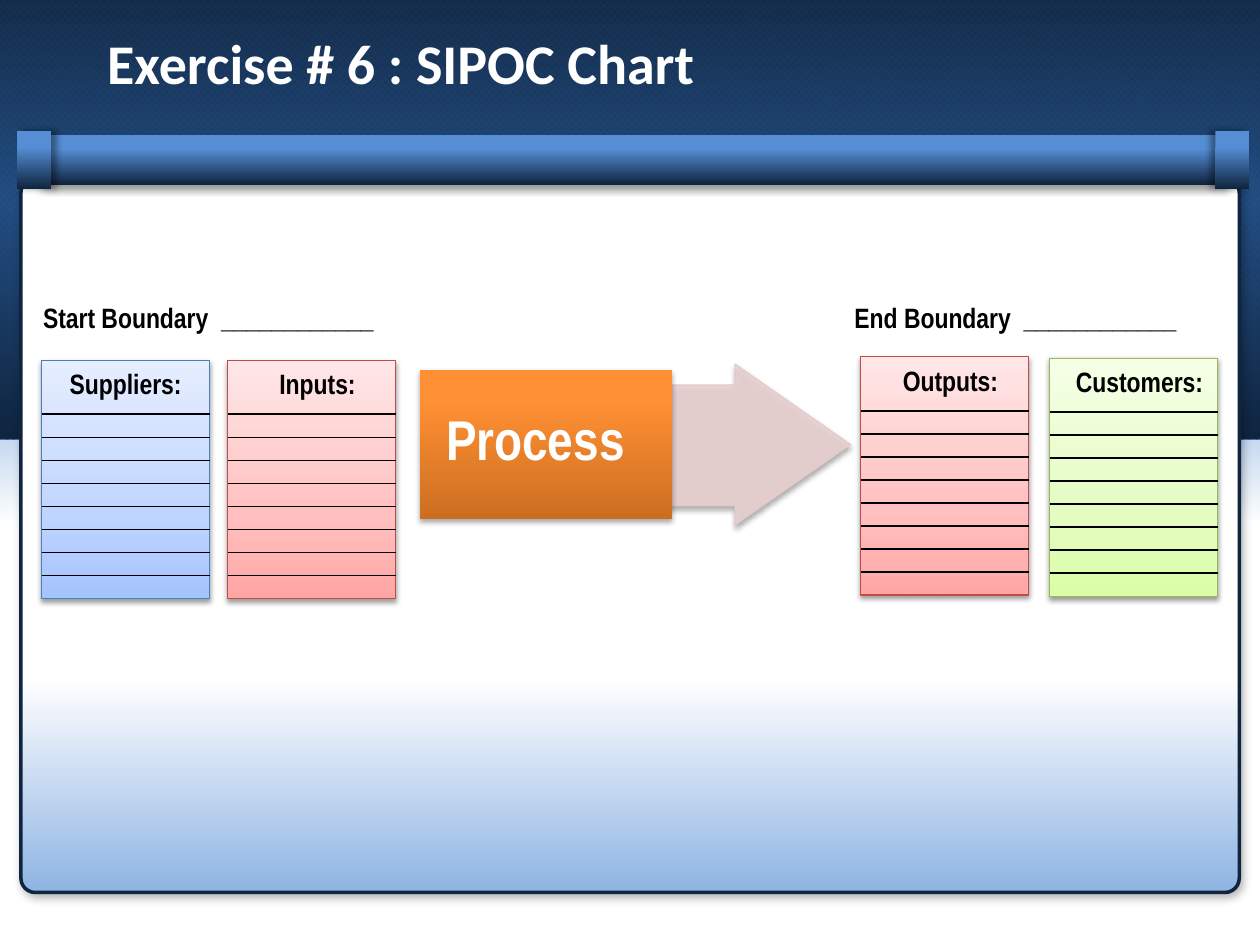
from lxml.etree import SubElement
from pptx import Presentation
from pptx.dml.color import RGBColor
from pptx.enum.dml import MSO_PATTERN
from pptx.enum.shapes import MSO_CONNECTOR, MSO_SHAPE
from pptx.enum.text import MSO_ANCHOR as Anchor, MSO_AUTO_SIZE as AutoSize, PP_ALIGN as Align
from pptx.oxml.ns import qn
from pptx.util import Pt

THEME = {
    "title_font": "Calibri", "font": "Arial Narrow",
    "large": 32, "small": 16,
    "white": "FFFFFF", "black": "000000", "navy": "0F243E", "blue": "558ED5",
    "arrow": "E8D0D0", "arrow_line": "E3CBCB",
    # Gradients: angle, then stops of position, colour and optional opacity
    "floor": (90, [(0, "8EB4E3"), (29, "FFFFFF"), (100, "FFFFFF")]),
    "sky": (90, [(0, "0F243E", 90), (46, "1F497D", 90), (100, "0F243E")]),
    "paper": (90, [(70, "FFFFFF"), (100, "8EB4E3")]),
    "tube": (90, [(28, "558ED5"), (100, "0F243E")]),
    "process": (270, [(0, "CC6E20"), (80, "FF9034"), (100, "FF9136")]),
    "blue_panel": (270, [(0, "A4C4FF"), (35, "BFD4FF"), (100, "E6EEFF")]),
    "red_panel": (270, [(0, "FFA6A5"), (35, "FFC0BF"), (100, "FFE7E7")]),
    "green_panel": (270, [(0, "DAFDA7"), (35, "E4FCC2"), (100, "F5FFE7")]),
    "blue_line": "4B7EBC", "red_line": "BF4C48", "green_line": "98B955",
    # Shadows: opacity, blur, distance, direction
    "paper_shadow": (30, 4.5, 2.6, 53),
    "panel_shadow": (38, 3.1, 1.6, 90),
    "process_shadow": (35, 3.1, 1.8, 90),
}

TITLE = ("Exercise # 6 : SIPOC Chart", (54, 12.2, 624, 46.1))
BOUNDARIES = [
    ("Start Boundary  ____________", (16.6, 167.8, 205.2, 26.6)),
    ("End Boundary  ____________", (480.2, 167.8, 200.2, 26.6)),
]
PROCESS = ("Process", (247, 227.5, 118, 46.1))
PROCESS_BOX = (240, 211.5, 144, 85)
ARROW = [(252, 220), (420.5, 220), (420.5, 208.5), (486, 254.5),
         (420.5, 300.5), (420.5, 289), (252, 289)]
# Name, left, top, header indent, colour family
PANELS = [
    ("Suppliers:", 23.8, 205.9, 0, "blue"),
    ("Inputs:", 130.2, 205.9, 6.5, "red"),
    ("Outputs:", 491.9, 203.9, 6.5, "red"),
    ("Customers:", 599.9, 204.7, 6.5, "green"),
]
PANEL_WIDTH, PANEL_HEIGHT = 96, 136.1
HEADER_HEIGHT, HEADER_TEXT_HEIGHT, ROWS = 30.9, 26.6, 8

SKY_BOX = (-2, -0.7, 723, 252)
# Box and shadow direction
TUBE_PARTS = [
    ((23, 77.2, 678.2, 28.4), 90),
    ((9.8, 74.9, 19.4, 33.1), 0),
    ((694.5, 74.9, 19.4, 33.1), 180),
]


def rgb(name):
    return RGBColor.from_string(THEME.get(name, name))


def assign(target, values):
    for name, value in values.items():
        setattr(target, name, value)


def place(shape, box):
    assign(shape, dict(zip(("left", "top", "width", "height"), map(Pt, box))))


def add_color(parent, color, opacity=100):
    element = SubElement(parent, qn("a:srgbClr"), val=color)
    if opacity < 100:
        SubElement(element, qn("a:alpha"), val=str(opacity * 1000))


def set_gradient(shape, name):
    angle, stops = THEME[name]
    shape.fill.solid()
    properties = shape.element.spPr
    solid = properties.find(qn("a:solidFill"))
    gradient = SubElement(properties, qn("a:gradFill"), rotWithShape="1")
    properties.replace(solid, gradient)
    stop_list = SubElement(gradient, qn("a:gsLst"))
    for position, *color in stops:
        add_color(SubElement(stop_list, qn("a:gs"), pos=str(position * 1000)), *color)
    SubElement(gradient, qn("a:lin"), ang=str(angle * 60000), scaled="0")


def set_line(shape, color, width):
    shape.line.color.rgb = rgb(color)
    shape.line.width = Pt(width)


def set_shadow(shape, shadow):
    opacity, blur, distance, direction = shadow
    effects = shape.element.spPr.find(qn("a:effectLst"))
    outer = SubElement(effects, qn("a:outerShdw"), blurRad=str(Pt(blur)),
                       dist=str(Pt(distance)), dir=str(direction * 60000), rotWithShape="0")
    add_color(outer, THEME["black"], opacity)


def add_box(shapes, box, gradient=None, line=None, shadow=None, kind=MSO_SHAPE.RECTANGLE):
    shape = shapes.add_shape(kind, *map(Pt, box))
    shape.shadow.inherit = False
    if gradient:
        set_gradient(shape, gradient)
    if line:
        set_line(shape, *line)
    else:
        shape.line.fill.background()
    if shadow:
        set_shadow(shape, shadow)
    return shape


def write(shape, text, color, size="small", font="font", align=Align.CENTER,
          anchor=Anchor.MIDDLE, wrap=False):
    frame = shape.text_frame
    frame.text = text
    assign(frame, {"word_wrap": wrap, "vertical_anchor": anchor,
                   "auto_size": AutoSize.SHAPE_TO_FIT_TEXT})
    paragraph = frame.paragraphs[0]
    paragraph.alignment = align
    run_font = paragraph.runs[0].font
    assign(run_font, {"name": THEME[font], "size": Pt(THEME[size]), "bold": True})
    run_font.color.rgb = rgb(color)


def add_text(shapes, text, box, color="black", **options):
    write(shapes.add_textbox(*map(Pt, box)), text, color, **options)


def add_rule(shapes, left, right, y):
    rule = shapes.add_connector(MSO_CONNECTOR.STRAIGHT, Pt(left), Pt(y), Pt(right), Pt(y))
    set_line(rule, "black", 1)
    SubElement(rule.element.spPr, qn("a:effectLst"))


def add_backdrop(shapes):
    add_box(shapes, (-0.7, 203.8, 722.2, 333.4), "floor")
    pattern = add_box(shapes, SKY_BOX).fill
    pattern.patterned()
    pattern.pattern = MSO_PATTERN.from_xml("openDmnd")
    pattern.fore_color.rgb = rgb("navy")
    pattern.back_color.rgb = rgb("blue")
    add_box(shapes, SKY_BOX, "sky")
    paper = add_box(shapes, (12, 102, 696.2, 408), "paper", ("navy", 2),
                    THEME["paper_shadow"], MSO_SHAPE.ROUNDED_RECTANGLE)
    paper.adjustments[0] = 0.02
    tube = shapes.add_group_shape().shapes
    for box, direction in TUBE_PARTS:
        add_box(tube, box, "tube", shadow=(40, 4, 3, direction))


def add_arrow(shapes):
    builder = shapes.build_freeform(*ARROW[0], scale=Pt(1))
    builder.add_line_segments(ARROW[1:], close=True)
    arrow = builder.convert_to_shape()
    arrow.shadow.inherit = False
    arrow.fill.solid()
    arrow.fill.fore_color.rgb = rgb("arrow")
    set_line(arrow, "arrow_line", 0.75)
    for color in arrow.element.spPr.iter(qn("a:srgbClr")):
        SubElement(color, qn("a:alpha"), val="90000")
    set_shadow(arrow, THEME["process_shadow"])


def add_panel(shapes, name, left, top, indent, family):
    panel = shapes.add_group_shape().shapes
    add_box(panel, (left, top, PANEL_WIDTH, PANEL_HEIGHT), f"{family}_panel",
            (f"{family}_line", 0.75), THEME["panel_shadow"])
    row_height = (PANEL_HEIGHT - HEADER_HEIGHT) / ROWS
    for row in range(ROWS):
        add_rule(panel, left, left + PANEL_WIDTH, top + HEADER_HEIGHT + row * row_height)
    header = (left + indent, top, PANEL_WIDTH - indent, HEADER_TEXT_HEIGHT)
    add_text(panel, name, header, wrap=True)


def main():
    presentation = Presentation()
    assign(presentation, {"slide_width": Pt(720), "slide_height": Pt(540)})
    slide = presentation.slides.add_slide(presentation.slide_layouts[5])
    shapes = slide.shapes
    add_backdrop(shapes)

    title = shapes.title
    title.element.getparent().append(title.element)  # bring in front of the backdrop
    text, box = TITLE
    place(title, box)
    write(title, text, "white", "large", "title_font", Align.LEFT, Anchor.BOTTOM, True)

    for text, box in BOUNDARIES:
        add_text(shapes, text, box)
    add_arrow(shapes)
    add_box(shapes, PROCESS_BOX, "process", shadow=THEME["process_shadow"])
    add_text(shapes, *PROCESS, color="white", size="large")
    for panel in PANELS:
        add_panel(shapes, *panel)
    presentation.save("out.pptx")


if __name__ == "__main__":
    main()
